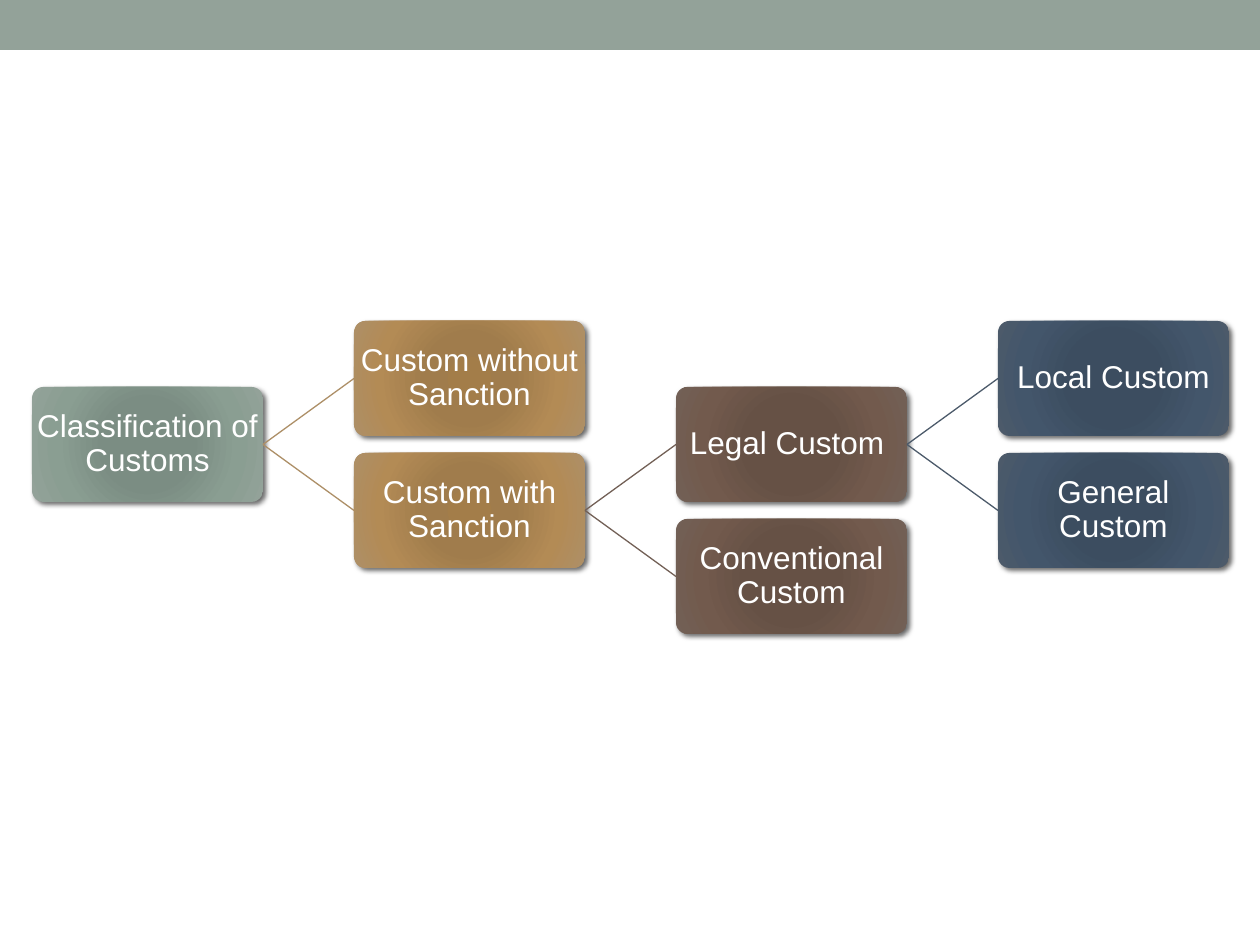
from dataclasses import dataclass

from lxml.etree import SubElement
from pptx import Presentation
from pptx.dml.color import RGBColor
from pptx.enum.shapes import MSO_CONNECTOR, MSO_SHAPE
from pptx.enum.text import MSO_ANCHOR, PP_ALIGN
from pptx.oxml import parse_xml
from pptx.oxml.ns import nsdecls, qn
from pptx.shapes.autoshape import Shape
from pptx.slide import Slide
from pptx.util import Emu, Pt

PIXEL = 914400 // 126
PAGE_WIDTH, PAGE_HEIGHT = 1260, 945
BOX_WIDTH, BOX_HEIGHT = 231, 115
LEFT, TOP = 32, 321
COLUMN_STEP, ROW_STEP = 322, 66
LEFT_SITE, RIGHT_SITE = 1, 3

# Gradient colours of each column, from the centre of a box to its edge
STOPS = (0, 34, 70, 100)
COLUMN_COLOURS = (
    ("7B8E82", "7B8D83", "8A9E92", "93A299"),
    ("A37D49", "A07C4C", "B38B55", "AD8F67"),
    ("685044", "665145", "725A4D", "726056"),
    ("3B4D61", "3C4D60", "43566B", "4C5A6A"),
)


@dataclass(frozen=True)
class Node:
    """A box in the tree; rows are half a box apart, so siblings differ by two."""
    text: str
    column: int
    row: int
    parent: str | None = None


NODES = (
    Node("Classification of Customs", 0, 1),
    Node("Custom without Sanction", 1, 0, "Classification of Customs"),
    Node("Custom with Sanction", 1, 2, "Classification of Customs"),
    Node("Legal Custom ", 2, 1, "Custom with Sanction"),
    Node("Local Custom", 3, 0, "Legal Custom "),
    Node("General Custom", 3, 2, "Legal Custom "),
    Node("Conventional Custom", 2, 3, "Custom with Sanction"),
)


def px(length: int) -> Emu:
    return Emu(length * PIXEL)


def colour(value: str) -> RGBColor:
    return RGBColor.from_string(value)


def add_box(page: Slide, kind: MSO_SHAPE, left: int, top: int, width: int, height: int) -> Shape:
    box = page.shapes.add_shape(kind, px(left), px(top), px(width), px(height))
    box.shadow.inherit = False
    box.line.fill.background()
    return box


def fill_radial(box: Shape, colours: tuple[str, ...]) -> None:
    box.fill.background()
    stops = "".join(
        f'<a:gs pos="{stop * 1000}"><a:srgbClr val="{value}"/></a:gs>'
        for stop, value in zip(STOPS, colours)
    )
    gradient = parse_xml(
        f'<a:gradFill {nsdecls("a")} rotWithShape="1"><a:gsLst>{stops}</a:gsLst>'
        '<a:path path="circle"><a:fillToRect l="100000" t="100000" r="100000" b="100000"/>'
        "</a:path></a:gradFill>"
    )
    properties = box.element.spPr
    properties.replace(properties.find(qn("a:noFill")), gradient)


def add_shadow(box: Shape) -> None:
    effects = box.element.spPr.find(qn("a:effectLst"))
    effects.append(parse_xml(
        f'<a:outerShdw {nsdecls("a")} blurRad="{Pt(3)}" dist="{Pt(2)}" dir="2700000"'
        ' rotWithShape="0"><a:srgbClr val="000000"><a:alpha val="60000"/></a:srgbClr>'
        "</a:outerShdw>"
    ))


def write_text(box: Shape, text: str) -> None:
    frame = box.text_frame
    frame.word_wrap = True
    frame.vertical_anchor = MSO_ANCHOR.MIDDLE
    frame.margin_left = frame.margin_right = px(1)
    frame.margin_top = frame.margin_bottom = px(1)
    para = frame.paragraphs[0]
    para.alignment = PP_ALIGN.CENTER
    para.line_spacing = 0.9
    span = para.add_run()
    span.text = text
    span.font.name = "Arial"
    span.font.size = Pt(18)
    span.font.color.rgb = colour("FFFFFF")


def add_node(page: Slide, node: Node) -> Shape:
    box = add_box(
        page, MSO_SHAPE.ROUNDED_RECTANGLE,
        LEFT + node.column * COLUMN_STEP, TOP + node.row * ROW_STEP,
        BOX_WIDTH, BOX_HEIGHT,
    )
    box.adjustments[0] = 0.1
    fill_radial(box, COLUMN_COLOURS[node.column])
    add_shadow(box)
    write_text(box, node.text)
    return box


def add_branch(page: Slide, parent: Shape, child: Shape, line_colour: str) -> None:
    branch = page.shapes.add_connector(MSO_CONNECTOR.STRAIGHT, 0, 0, 0, 0)
    branch.begin_connect(parent, RIGHT_SITE)
    branch.end_connect(child, LEFT_SITE)
    branch.line.color.rgb = colour(line_colour)
    branch.line.width = Pt(0.75)
    SubElement(branch.element.spPr, qn("a:effectLst"))


def main() -> None:
    deck = Presentation()
    deck.slide_width, deck.slide_height = px(PAGE_WIDTH), px(PAGE_HEIGHT)
    page = deck.slides.add_slide(deck.slide_layouts[6])

    band = add_box(page, MSO_SHAPE.RECTANGLE, 0, 0, PAGE_WIDTH, 50)
    band.fill.solid()
    band.fill.fore_color.rgb = colour("93A299")

    boxes = {node.text: add_node(page, node) for node in NODES}
    for node in NODES:
        if node.parent:
            edge_colour = COLUMN_COLOURS[node.column][-1]
            add_branch(page, boxes[node.parent], boxes[node.text], edge_colour)

    deck.save("out.pptx")


if __name__ == "__main__":
    main()
